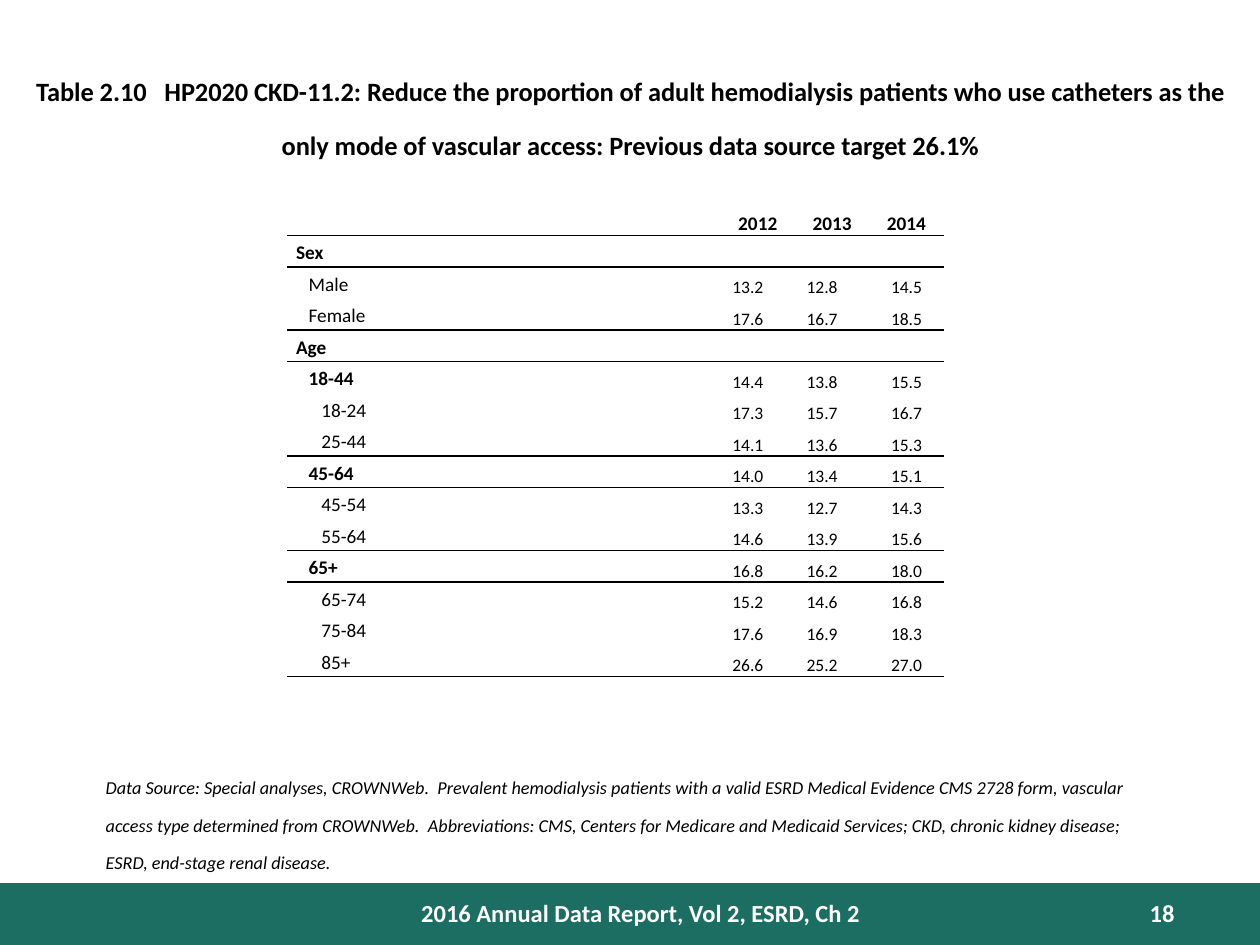
from lxml.etree import SubElement
from pptx import Presentation
from pptx.dml.color import RGBColor
from pptx.enum.shapes import MSO_SHAPE as Shape
from pptx.enum.text import MSO_ANCHOR as Anchor, PP_ALIGN as Align
from pptx.oxml.ns import qn
from pptx.util import Inches, Pt

BLACK = RGBColor(0x00, 0x00, 0x00)
WHITE = RGBColor(0xFF, 0xFF, 0xFF)
GREEN = RGBColor(0x1C, 0x6E, 0x62)
FONT = "Calibri"
NO_STYLE = "{2D5ABB26-0587-4C30-8999-92F81FD0307C}"

TITLE = (
    "Table 2.10   HP2020 CKD-11.2: Reduce the proportion of adult hemodialysis "
    "patients who use catheters as the only mode of vascular access: "
    "Previous data source target 26.1%"
)
SOURCE_NOTE = (
    "Data Source: Special analyses, CROWNWeb.  Prevalent hemodialysis patients "
    "with a valid ESRD Medical Evidence CMS 2728 form, vascular access type "
    "determined from CROWNWeb.  Abbreviations: CMS, Centers for Medicare and "
    "Medicaid Services; CKD, chronic kidney disease; ESRD, end-stage renal disease."
)
YEARS = ["2012", "2013", "2014"]
GROUPS = [
    ("Sex", 0, True, []),
    ("Male", 1, False, ["13.2", "12.8", "14.5"]),
    ("Female", 1, False, ["17.6", "16.7", "18.5"]),
    ("Age", 0, True, []),
    ("18-44", 1, True, ["14.4", "13.8", "15.5"]),
    ("18-24", 2, False, ["17.3", "15.7", "16.7"]),
    ("25-44", 2, False, ["14.1", "13.6", "15.3"]),
    ("45-64", 1, True, ["14.0", "13.4", "15.1"]),
    ("45-54", 2, False, ["13.3", "12.7", "14.3"]),
    ("55-64", 2, False, ["14.6", "13.9", "15.6"]),
    ("65+", 1, True, ["16.8", "16.2", "18.0"]),
    ("65-74", 2, False, ["15.2", "14.6", "16.8"]),
    ("75-84", 2, False, ["17.6", "16.9", "18.3"]),
    ("85+", 2, False, ["26.6", "25.2", "27.0"]),
]
RULED_ROWS = {0, 3, 7, 10, 14}
LABEL_INSETS = (0.07, 0, 0.07, 0)
VALUE_INSETS = (0, 0.03, 0.16, 0)


def add_run(paragraph, text, size, color=BLACK, bold=False, italic=False):
    run = paragraph.add_run()
    run.text = text
    run.font.name = FONT
    run.font.size = Pt(size)
    run.font.bold = bold
    run.font.italic = italic
    run.font.color.rgb = color
    return run


def add_text(slide, box, text, size, align=Align.LEFT, raised=False, **style):
    frame = slide.shapes.add_textbox(*map(Inches, box)).text_frame
    frame.word_wrap = True
    paragraph = frame.paragraphs[0]
    paragraph.alignment = align
    run = add_run(paragraph, text, size, **style)
    if raised:
        run._r.get_or_add_rPr().set("baseline", "30000")


def add_footer(slide):
    band = slide.shapes.add_shape(
        Shape.RECTANGLE, 0, Inches(7.01), Inches(10), Inches(0.5)
    )
    band.shadow.inherit = False
    band.fill.solid()
    band.fill.fore_color.rgb = GREEN
    band.line.fill.background()
    footer_style = {"size": 14, "color": WHITE, "bold": True}
    add_text(slide, (3.17, 7.08, 3.83, 0.33),
             "2016 Annual Data Report, Vol 2, ESRD, Ch 2",
             align=Align.CENTER, **footer_style)
    add_text(slide, (8.42, 7.08, 1, 0.3), "18", align=Align.RIGHT, **footer_style)


def add_rule(cell, side):
    rule = SubElement(cell._tc.get_or_add_tcPr(), qn(f"a:{side}"), w=str(Pt(1)))
    fill = SubElement(rule, qn("a:solidFill"))
    SubElement(fill, qn("a:srgbClr"), val=str(BLACK))


def set_cell(cell, text, size, insets, anchor, align, bold=False, level=0):
    cell.margin_left, cell.margin_top, cell.margin_right, cell.margin_bottom = map(
        Inches, insets
    )
    cell.vertical_anchor = anchor
    paragraph = cell.text_frame.paragraphs[0]
    paragraph.alignment = align
    paragraph.line_spacing = 1.15
    if level:
        paragraph._p.get_or_add_pPr().set("marL", str(Inches(0.1 * level)))
    if text:
        add_run(paragraph, text, size, bold=bold)
    else:
        SubElement(paragraph._p, qn("a:endParaRPr"), sz=str(size * 100))


def add_access_table(slide):
    table = slide.shapes.add_table(
        len(GROUPS) + 1, len(YEARS) + 1,
        Inches(2.28), Inches(1.33), Inches(5.21), Inches(4.04),
    ).table
    table.first_row = False
    table.horz_banding = False
    table._tbl.tblPr.find(qn("a:tableStyleId")).text = NO_STYLE
    for index, column in enumerate(table.columns):
        column.width = Inches(0.59 if index else 3.44)
    for index, row in enumerate(table.rows):
        row.height = Inches(0.25 if index else 0.54)
        for cell in row.cells:
            if index - 1 in RULED_ROWS:
                add_rule(cell, "lnT")
            if index in RULED_ROWS:
                add_rule(cell, "lnB")
            cell.fill.background()

    for index, year in enumerate(["", *YEARS]):
        set_cell(table.cell(0, index), year, 11, LABEL_INSETS,
                 Anchor.BOTTOM, Align.CENTER, bold=True)
    for row, (label, level, bold, values) in enumerate(GROUPS, start=1):
        set_cell(table.cell(row, 0), label, 11, LABEL_INSETS,
                 Anchor.MIDDLE, Align.LEFT, bold, level)
        for index, value in enumerate(values or [""] * len(YEARS), start=1):
            insets = LABEL_INSETS if index == len(YEARS) else VALUE_INSETS
            set_cell(table.cell(row, index), value, 10, insets,
                     Anchor.BOTTOM, Align.CENTER)


def main():
    deck = Presentation()
    deck.slide_width = Inches(10)
    deck.slide_height = Inches(7.5)
    slide = deck.slides.add_slide(deck.slide_layouts[6])
    add_footer(slide)
    add_text(slide, (0.74, 6.08, 8.51, 0.71), SOURCE_NOTE, 18,
             raised=True, italic=True)
    add_text(slide, (0, 0.5, 10, 0.68), TITLE, 26,
             align=Align.CENTER, raised=True, bold=True)
    add_access_table(slide)
    deck.save("out.pptx")


if __name__ == "__main__":
    main()
